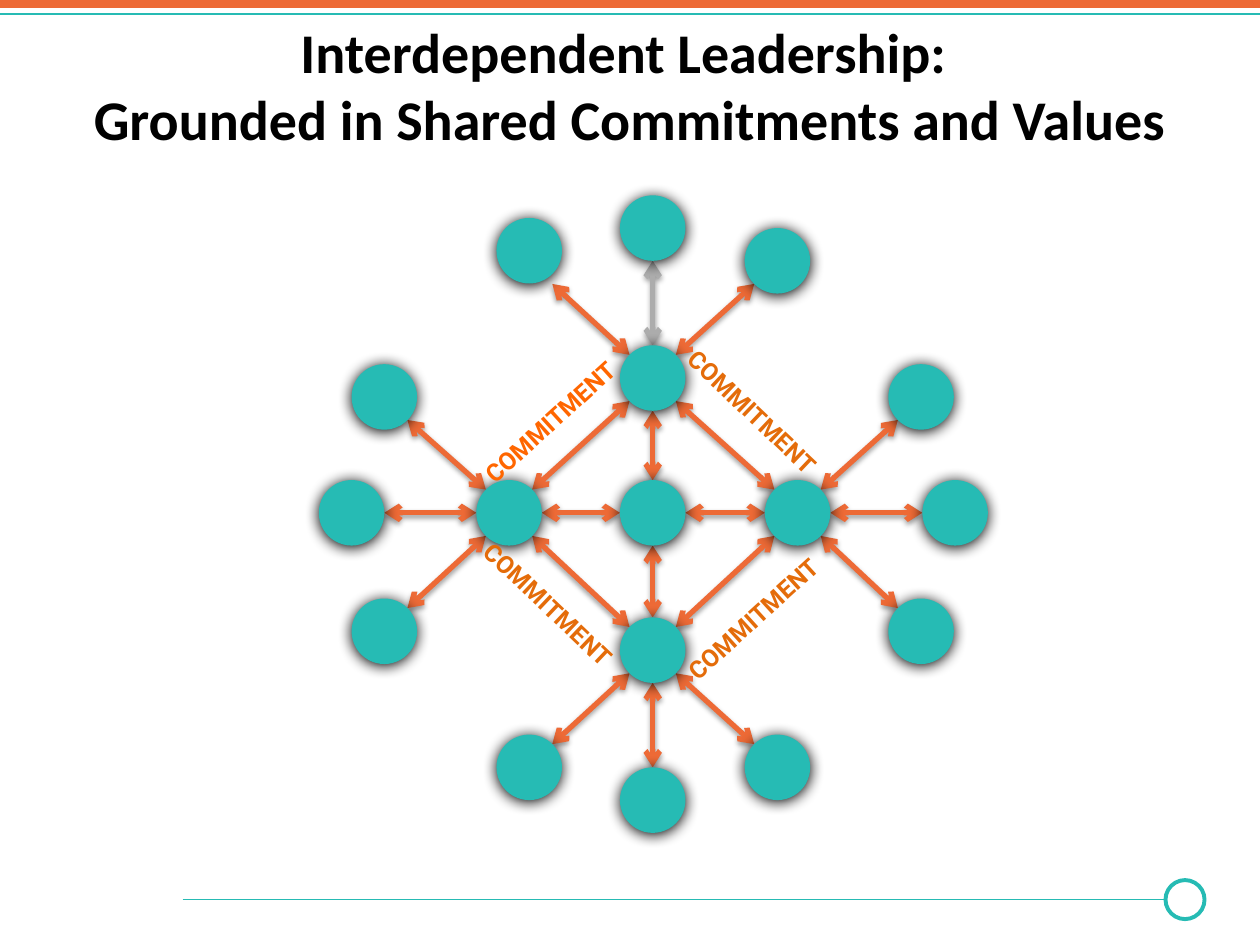
from math import copysign, hypot

from lxml import etree
from pptx import Presentation
from pptx.dml.color import RGBColor
from pptx.enum.shapes import MSO_CONNECTOR, MSO_SHAPE
from pptx.enum.text import MSO_ANCHOR, PP_ALIGN
from pptx.oxml.ns import qn
from pptx.util import Inches, Pt

STRAIGHT = MSO_CONNECTOR.STRAIGHT
OVAL = MSO_SHAPE.OVAL
TOP = MSO_ANCHOR.TOP
CENTER = PP_ALIGN.CENTER

TEAL, ORANGE, GREY = "26BBB4", "ED6A36", "ACACAC"
NODE_SIZE = 0.52
NODE_SHADOW = (8.5, 1, 100)
LINK_SHADOW = (3.1, 1.6, 38)

CORE = (2.65, 2.52)
HUBS = {
    "top": (2.65, 1.45),
    "right": (3.8, 2.52),
    "bottom": (2.65, 3.61),
    "left": (1.51, 2.52),
}
SATELLITES = {
    "top": [(1.67, 0.52), (2.65, 0.26), (3.64, 0.52)],
    "right": [(4.78, 1.6), (5.05, 2.52), (4.78, 3.46)],
    "bottom": [(1.67, 4.54), (2.65, 4.8), (3.64, 4.54)],
    "left": [(0.52, 1.6), (0.26, 2.52), (0.52, 3.46)],
}
RAISED, RAISED_BY = (1.67, 0.52), 0.08
GREY_SATELLITE = (2.65, 0.26)
COMMITMENTS = [
    (1.05, 1.55, 317.7, "FF6600"),
    (2.66, 3.11, 317.7, "E46C0A"),
    (2.65, 1.63, 43.5, "E46C0A"),
    (1.03, 3.16, 43.5, "E46C0A"),
]


def rgb(value):
    """Turn a hex string into a colour."""
    return RGBColor.from_string(value)


def set_shadow(shape, blur=0, distance=0, opacity=0):
    """Give a shape a downward black shadow, or none when opacity is zero."""
    effects = etree.SubElement(shape.element.spPr, qn("a:effectLst"))
    if opacity:
        shadow = etree.SubElement(
            effects, qn("a:outerShdw"), blurRad=str(Pt(blur)),
            dist=str(Pt(distance)), dir="5400000", rotWithShape="0")
        black = etree.SubElement(shadow, qn("a:srgbClr"), val="000000")
        etree.SubElement(black, qn("a:alpha"), val=str(opacity * 1000))


def add_line(slide, start, end, color, width):
    """Draw a straight line between two points."""
    line = slide.shapes.add_connector(
        STRAIGHT, *(Inches(length) for length in (*start, *end)))
    line.line.color.rgb = rgb(color)
    line.line.width = Pt(width)
    return line


def add_frame(slide, left, top, width, height):
    """Draw the rules at the head and the ringed rule at the foot."""
    foot, ring_size = top + 7.14, 0.31
    ring_left = left + width - 0.75
    for start, end, y, color, weight in (
            (left + 1.45, ring_left, foot, TEAL, 1),
            (left, left + width, top + 0.11, TEAL, 1),
            (left, left + width, top + 0.03, ORANGE, 4.5)):
        set_shadow(add_line(slide, (start, y), (end, y), color, weight))
    ring = slide.shapes.add_shape(
        OVAL, Inches(ring_left), Inches(foot - ring_size / 2),
        Inches(ring_size), Inches(ring_size))
    ring.shadow.inherit = False
    ring.fill.background()
    ring.line.color.rgb = rgb(TEAL)
    ring.line.width = Pt(2.25)


def add_title(slide, left, top, width, height):
    """Write the two-line title."""
    title = slide.shapes.add_textbox(
        Inches(left), Inches(top), Inches(width), Inches(height)).text_frame
    title.word_wrap = True
    title.vertical_anchor = TOP
    title.text = ("Interdependent Leadership: \n"
                  "Grounded in Shared Commitments and Values")
    for paragraph in title.paragraphs:
        paragraph.alignment = CENTER
        paragraph.font.name = "Calibri"
        paragraph.font.size = Pt(32)
        paragraph.font.bold = True
        paragraph.font.color.rgb = rgb("000000")


def add_node(slide, x, y):
    """Draw a person as a disc centred on a point."""
    node = slide.shapes.add_shape(
        OVAL, Inches(x - NODE_SIZE / 2), Inches(y - NODE_SIZE / 2),
        Inches(NODE_SIZE), Inches(NODE_SIZE))
    node.fill.solid()
    node.fill.fore_color.rgb = rgb(TEAL)
    node.line.fill.background()
    set_shadow(node, *NODE_SHADOW)


def add_link(slide, first, second, color=ORANGE):
    """Join the rims of two nodes with a double arrow, in one of eight directions."""
    step = [copysign(1, b - a) if a != b else 0 for a, b in zip(first, second)]
    rim = [NODE_SIZE / 2 * part / hypot(*step) for part in step]
    start = [a + r for a, r in zip(first, rim)]
    end = [b - r for b, r in zip(second, rim)]
    link = add_line(slide, start, end, color, 3)
    outline = link.element.spPr.find(qn("a:ln"))
    for tip in ("a:headEnd", "a:tailEnd"):
        etree.SubElement(outline, qn(tip), type="arrow")
    set_shadow(link, *LINK_SHADOW)


def add_commitment(slide, left, top, rotation, color):
    """Write one slanted label."""
    label = slide.shapes.add_textbox(
        Inches(left), Inches(top), Inches(1.75), Inches(0.34))
    label.rotation = rotation
    label.text_frame.word_wrap = True
    label.text_frame.text = "COMMITMENT"
    font = label.text_frame.paragraphs[0].font
    font.name = "Roboto"
    font.size = Pt(14)
    font.bold = True
    font.color.rgb = rgb(color)


def add_network(slide, left, top):
    """Draw the core, its four hubs, their satellites and the labels."""
    def place(point):
        return left + point[0], top + point[1]

    hubs = list(HUBS.values())
    for hub, following in zip(hubs, hubs[1:] + hubs[:1]):
        add_link(slide, place(CORE), place(hub))
        add_link(slide, place(hub), place(following))
    for side, satellites in SATELLITES.items():
        for satellite in satellites:
            color = GREY if satellite == GREY_SATELLITE else ORANGE
            add_link(slide, place(HUBS[side]), place(satellite), color)
    for point in [CORE, *hubs, *sum(SATELLITES.values(), [])]:
        x, y = place(point)
        add_node(slide, x, y - RAISED_BY if point == RAISED else y)
    for x, y, rotation, color in COMMITMENTS:
        add_commitment(slide, *place((x, y)), rotation, color)


def main():
    """Build and save the slide."""
    deck = Presentation()
    deck.slide_width, deck.slide_height = Inches(10), Inches(7.5)
    slide = deck.slides.add_slide(deck.slide_layouts[6])
    add_frame(slide, 0, 0, 10, 7.5)
    add_network(slide, 2.53, 1.55)
    add_title(slide, 0.5, 0.09, 9, 0.86)
    deck.save("out.pptx")


if __name__ == "__main__":
    main()
